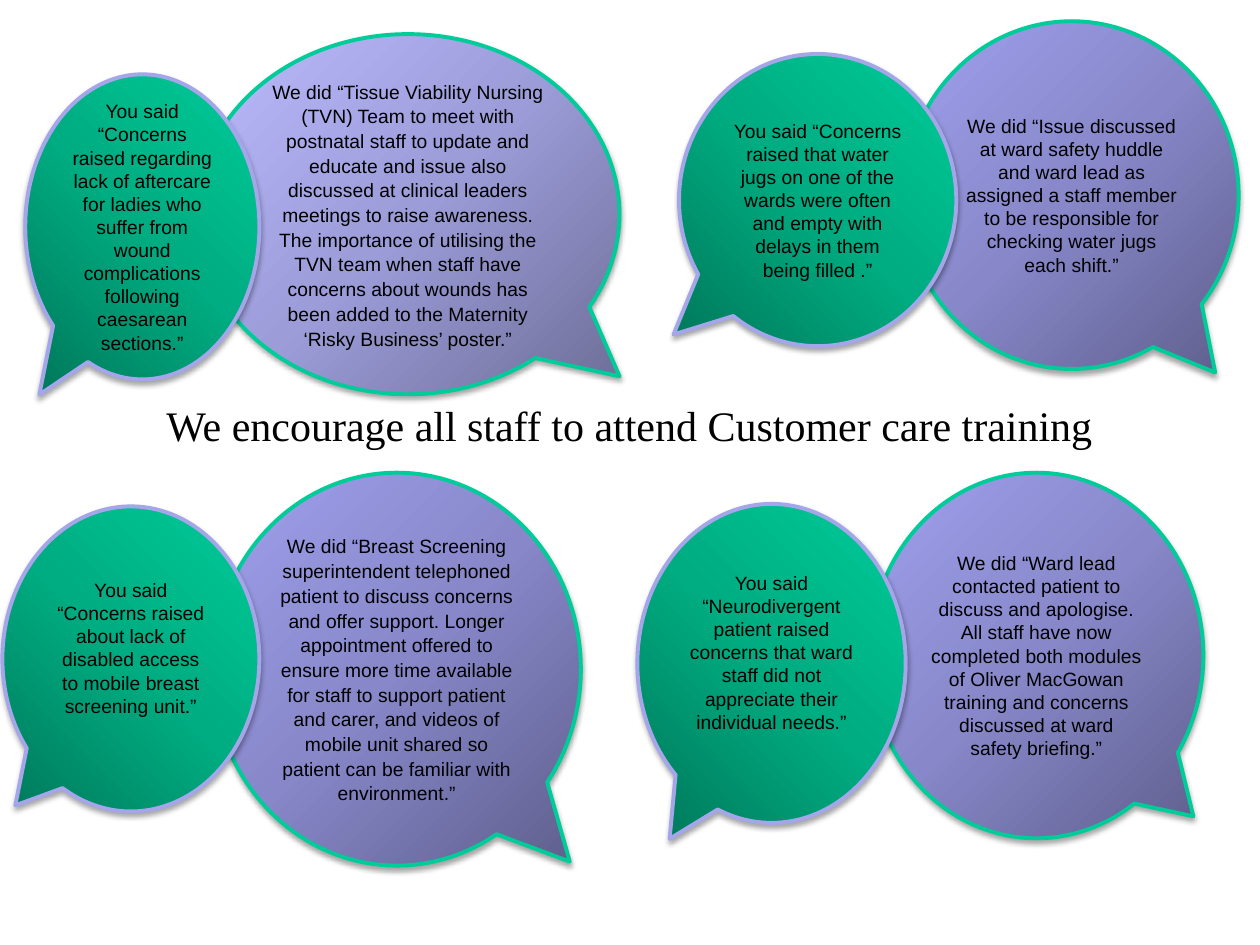
"""Build the slide of patient feedback bubbles and staff replies."""
from pptx import Presentation
from pptx.dml.color import RGBColor
from pptx.enum.shapes import MSO_SHAPE
from pptx.enum.text import MSO_ANCHOR, MSO_AUTO_SIZE, PP_ALIGN
from pptx.oxml import parse_xml
from pptx.oxml.ns import nsdecls, qn
from pptx.util import Cm, Pt

BUBBLE = MSO_SHAPE.OVAL_CALLOUT
MIDDLE = MSO_ANCHOR.MIDDLE
GROW = MSO_AUTO_SIZE.SHAPE_TO_FIT_TEXT
CENTER = PP_ALIGN.CENTER

COLORS = {
    "text": "000000",
    "green": "00CC99",
    "lilac": "A5A5E9",
    "leaf": ("00795B", "00AC81", "00CC99"),
    "dusk": ("5F5F8D", "8787C9", "A0A0EE"),
    "dawn": ("6E6E98", "9C9CD9", "BBBBFF"),
}
LEFT = 'l="0" t="100000" r="100000" b="0"'
RIGHT = 'l="100000" t="100000" r="0" b="0"'


def write(frame, text, font="Arial", size=11, lines=None, after=None):
    """Put one centred paragraph in the frame."""
    frame.word_wrap = True
    para = frame.paragraphs[0]
    para.alignment = CENTER
    para.line_spacing = lines
    para.space_after = None if after is None else Pt(after)
    run = para.add_run()
    run.text = text
    run.font.name = font
    run.font.size = Pt(size)
    run.font.color.rgb = RGBColor.from_string(COLORS["text"])


class Board:
    """Hold the style and the current slide."""

    def __init__(self, deck):
        self.slide = deck.slides.add_slide(deck.slide_layouts[6])

    def title(self, box, text):
        """Add the heading line."""
        frame = self.slide.shapes.add_textbox(*map(Cm, box)).text_frame
        write(frame, text, font="Times New Roman", size=24)
        frame.auto_size = GROW

    def bubble(self, box, tail, text, shades, edge, focus, foot=0.13, **style):
        """Add a speech bubble with a radial fill and a soft shadow."""
        shape = self.slide.shapes.add_shape(BUBBLE, *map(Cm, box))
        shape.adjustments[0], shape.adjustments[1] = tail
        shape.line.color.rgb = RGBColor.from_string(COLORS[edge])
        shape.line.width = Pt(2.25)
        self.shade(shape, COLORS[shades], focus)
        self.shadow(shape)
        frame = shape.text_frame
        frame.vertical_anchor = MIDDLE
        frame.margin_bottom = Cm(foot)
        write(frame, text, **style)

    def said(self, box, tail, text, **style):
        """Add a green patient bubble."""
        self.bubble(box, tail, text, "leaf", "lilac", LEFT, **style)

    def did(self, box, tail, text, shades="dusk", **style):
        """Add a lilac reply bubble."""
        self.bubble(box, tail, text, shades, "green", RIGHT, **style)

    def shade(self, shape, shades, focus):
        """Fill the shape from its dark corner outward."""
        shape.fill.background()
        props = shape._element.spPr
        stops = "".join(
            f'<a:gs pos="{n * 50000}"><a:srgbClr val="{tone}"/></a:gs>'
            for n, tone in enumerate(shades))
        props.replace(props.find(qn("a:noFill")), parse_xml(
            f'<a:gradFill {nsdecls("a")} rotWithShape="1"><a:gsLst>{stops}</a:gsLst>'
            f'<a:path path="circle"><a:fillToRect {focus}/></a:path></a:gradFill>'))

    def shadow(self, shape):
        """Drop a soft shadow below the shape."""
        shape.shadow.inherit = False
        shape._element.spPr.find(qn("a:effectLst")).append(parse_xml(
            f'<a:outerShdw {nsdecls("a")} blurRad="{Pt(3.1)}" dist="{Pt(1.8)}" '
            'dir="5400000" rotWithShape="0"><a:srgbClr val="000000">'
            '<a:alpha val="35000"/></a:srgbClr></a:outerShdw>'))


def main():
    """Draw the four pairs of bubbles and save the deck."""
    deck = Presentation()
    deck.slide_width, deck.slide_height = Cm(25.4), Cm(19.05)
    board = Board(deck)
    loose = {"lines": 1.07, "after": 8}
    raised = {"foot": 0.58}

    board.did((17.53, 9.53, 6.73, 7.37), (0.47, 0.44),
              "We did “Ward lead contacted patient to discuss and apologise. "
              "All staff have now completed both modules of Oliver MacGowan "
              "training and concerns discussed at ward safety briefing.”")
    board.title((1.9, 7.92, 21.59, 1.27),
                "We encourage all staff to attend Customer care training")
    board.did((4.29, 9.53, 7.42, 7.92), (0.47, 0.49),
              "We did “Breast Screening superintendent telephoned patient to "
              "discuss concerns and offer support. Longer appointment offered "
              "to ensure more time available for staff to support patient and "
              "carer, and videos of mobile unit shared so patient can be "
              "familiar with environment.”", **loose)
    board.said((0.05, 10.21, 5.18, 6.15), (-0.45, 0.48),
               "You said “Concerns raised about lack of disabled access to "
               "mobile breast screening unit.”", **raised)
    board.did((3.96, 0.69, 8.53, 7.26), (0.5, 0.45),
              "We did “Tissue Viability Nursing (TVN) Team to meet with "
              "postnatal staff to update and educate and issue also discussed "
              "at clinical leaders meetings to raise awareness. The importance "
              "of utilising the TVN team when staff have concerns about wounds "
              "has been added to the Maternity ‘Risky Business’ poster.”",
              shades="dawn", **loose)
    board.did((18.24, 0.43, 6.73, 7.01), (0.43, 0.51),
              "We did “Issue discussed at ward safety huddle and ward lead as "
              "assigned a staff member to be responsible for checking water "
              "jugs each shift.”")
    board.said((12.85, 10.16, 5.41, 6.43), (-0.38, 0.55),
               "You said “Neurodivergent patient raised concerns that ward "
               "staff did not appreciate their individual needs.”", **raised)
    board.said((13.69, 1.09, 5.59, 5.89), (-0.52, 0.46),
               "You said “Concerns raised that water jugs on one of the wards "
               "were often and empty with delays in them being filled .”")
    board.said((0.51, 1.5, 4.72, 6.15), (-0.44, 0.55),
               "You said “Concerns raised regarding lack of aftercare for "
               "ladies who suffer from wound complications following caesarean "
               "sections.”")
    deck.save("out.pptx")


if __name__ == "__main__":
    main()
